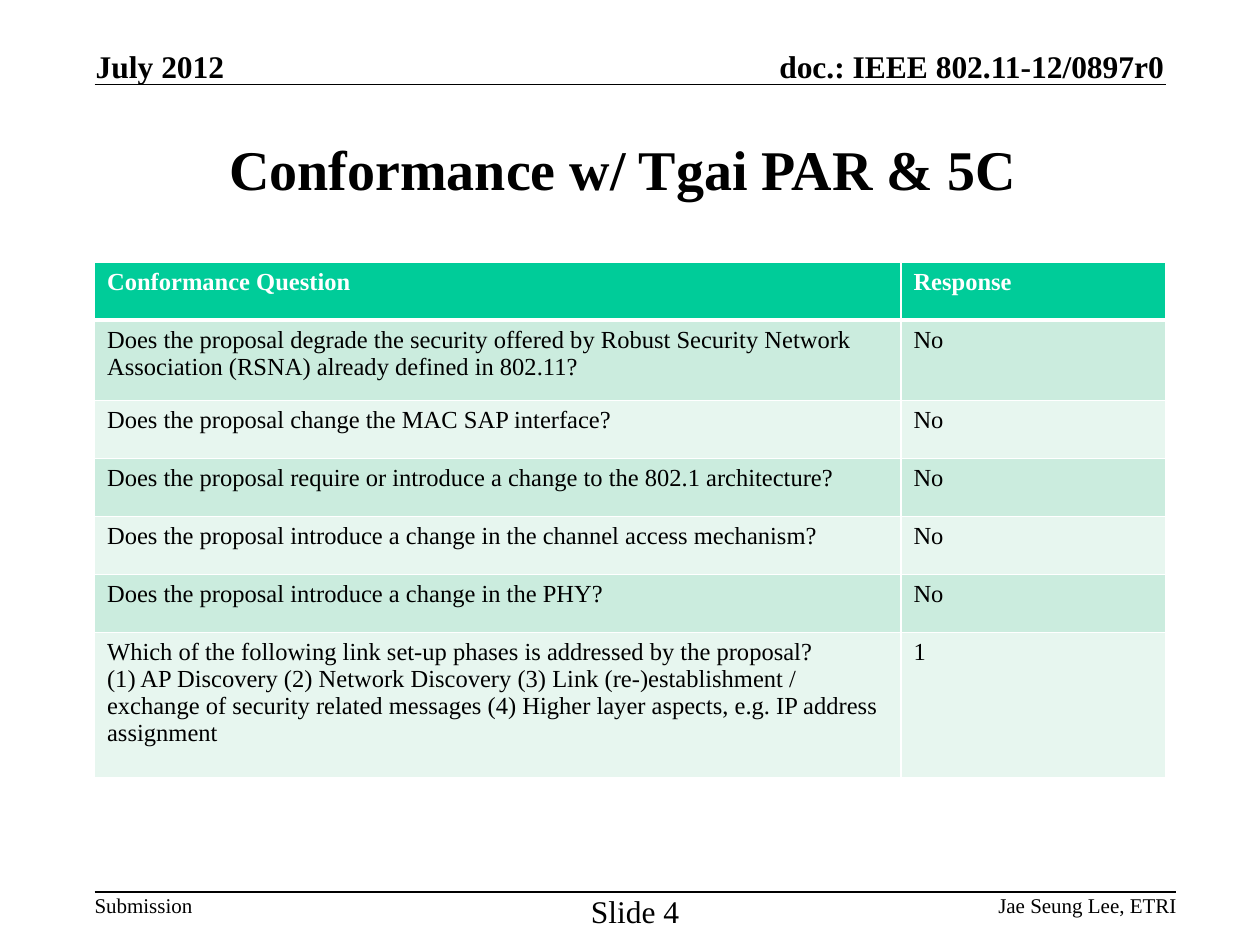
from typing import NamedTuple

from lxml import etree
from pptx import Presentation
from pptx.dml.color import RGBColor
from pptx.enum import shapes, text
from pptx.oxml import ns
from pptx.util import Inches, Pt

FONT = "Times New Roman"
BLACK = RGBColor(0x00, 0x00, 0x00)
WHITE = RGBColor(0xFF, 0xFF, 0xFF)
GREEN = RGBColor(0x00, 0xCC, 0x99)
MINT = RGBColor(0xCB, 0xEC, 0xDE)
PALE = RGBColor(0xE7, 0xF6, 0xEF)

LEFT, ALIGN_CENTER, RIGHT = text.PP_ALIGN.LEFT, text.PP_ALIGN.CENTER, text.PP_ALIGN.RIGHT
TOP, MIDDLE, BOTTOM = text.MSO_ANCHOR.TOP, text.MSO_ANCHOR.MIDDLE, text.MSO_ANCHOR.BOTTOM


class Label(NamedTuple):
    wording: str
    left: float
    top: float
    width: float
    height: float
    size: int
    bold: bool = False
    align: text.PP_ALIGN = LEFT
    anchor: text.MSO_ANCHOR = TOP
    wrap: bool = False


class Rule(NamedTuple):
    left: float
    right: float
    y: float


class Row(NamedTuple):
    question: str
    response: str
    height: float = 0.46


LABELS = [
    Label("doc.: IEEE 802.11-12/0897r0", 5.65, 0.37, 3.59, 0.3, 18, True, RIGHT, BOTTOM),
    Label("July 2012", 0.76, 0.37, 1.03, 0.3, 18, True, LEFT, BOTTOM),
    Label("Conformance w/ Tgai PAR & 5C ", 0.75, 0.75, 8.5, 1.17, 32, True,
          ALIGN_CENTER, MIDDLE, True),
    Label("Submission", 0.75, 7.08, 0.78, 0.2, 12),
    Label("Slide 4", 4.64, 7.08, 0.8, 0.28, 18, align=ALIGN_CENTER),
    Label("Jae Seung Lee, ETRI", 7.91, 7.08, 1.43, 0.2, 12, align=RIGHT),
]

RULES = [Rule(0.75, 9.25, 0.67), Rule(0.75, 9.33, 7.08)]

ROWS = [
    Row("Conformance Question", "Response"),
    Row("Does the proposal degrade the security offered by Robust Security Network "
        "Association (RSNA) already defined in 802.11?", "No", 0.64),
    Row("Does the proposal change the MAC SAP interface?", "No"),
    Row("Does the proposal require or introduce a change to the 802.1 architecture?", "No"),
    Row("Does the proposal introduce a change in the channel access mechanism?", "No"),
    Row("Does the proposal introduce a change in the PHY?", "No"),
    Row("Which of the following link set-up phases is addressed by the proposal?\n"
        "(1) AP Discovery (2) Network Discovery (3) Link (re-)establishment / exchange of "
        "security related messages (4) Higher layer aspects, e.g. IP address assignment",
        "1", 1.15),
]
COLUMN_WIDTHS = [6.4, 2.1]


def format_runs(frame, size: int, color: RGBColor, bold: bool, align: text.PP_ALIGN) -> None:
    for paragraph in frame.paragraphs:
        paragraph.alignment = align
        for run in paragraph.runs:
            run.font.name = FONT
            run.font.size = Pt(size)
            run.font.bold = bold
            run.font.color.rgb = color


def draw_label(slide, label: Label) -> None:
    box = slide.shapes.add_textbox(Inches(label.left), Inches(label.top),
                                   Inches(label.width), Inches(label.height))
    frame = box.text_frame
    frame.word_wrap = label.wrap
    frame.vertical_anchor = label.anchor
    if not label.wrap:
        frame.auto_size = text.MSO_AUTO_SIZE.SHAPE_TO_FIT_TEXT
        frame.margin_left = frame.margin_right = frame.margin_top = frame.margin_bottom = 0
    frame.text = label.wording
    format_runs(frame, label.size, BLACK, label.bold, label.align)


def draw_rule(slide, rule: Rule) -> None:
    line = slide.shapes.add_connector(shapes.MSO_CONNECTOR.STRAIGHT, Inches(rule.left),
                                      Inches(rule.y), Inches(rule.right), Inches(rule.y))
    line.line.color.rgb = BLACK
    line.line.width = Pt(1)
    etree.SubElement(line._element.spPr, ns.qn("a:effectLst"))


def set_borders(cell, top: int, bottom: int) -> None:
    properties = cell._tc.get_or_add_tcPr()
    sides = {"a:lnL": 1, "a:lnR": 1, "a:lnT": top, "a:lnB": bottom}
    for position, (side, points) in enumerate(sides.items()):
        border = etree.Element(ns.qn(side), w=str(Pt(points)))
        fill = etree.SubElement(border, ns.qn("a:solidFill"))
        etree.SubElement(fill, ns.qn("a:srgbClr"), val=str(WHITE))
        properties.insert(position, border)


def draw_conformance_table(slide, rows: list[Row]) -> None:
    table = slide.shapes.add_table(
        len(rows), len(COLUMN_WIDTHS), Inches(0.75), Inches(2.08),
        Inches(sum(COLUMN_WIDTHS)), Inches(sum(row.height for row in rows))).table
    for column, width in zip(table.columns, COLUMN_WIDTHS):
        column.width = Inches(width)
    for index, row in enumerate(rows):
        table.rows[index].height = Inches(row.height)
        header = index == 0
        background = GREEN if header else MINT if index % 2 else PALE
        for column, wording in enumerate((row.question, row.response)):
            cell = table.cell(index, column)
            cell.text_frame.text = wording
            format_runs(cell.text_frame, 14, WHITE if header else BLACK, header, LEFT)
            cell.fill.solid()
            cell.fill.fore_color.rgb = background
            set_borders(cell, 3 if index == 1 else 1, 3 if header else 1)


def main() -> None:
    deck = Presentation()
    deck.slide_width, deck.slide_height = Inches(10), Inches(7.5)
    slide = deck.slides.add_slide(deck.slide_layouts[6])
    for rule in RULES:
        draw_rule(slide, rule)
    for label in LABELS:
        draw_label(slide, label)
    draw_conformance_table(slide, ROWS)
    deck.save("out.pptx")


if __name__ == "__main__":
    main()
